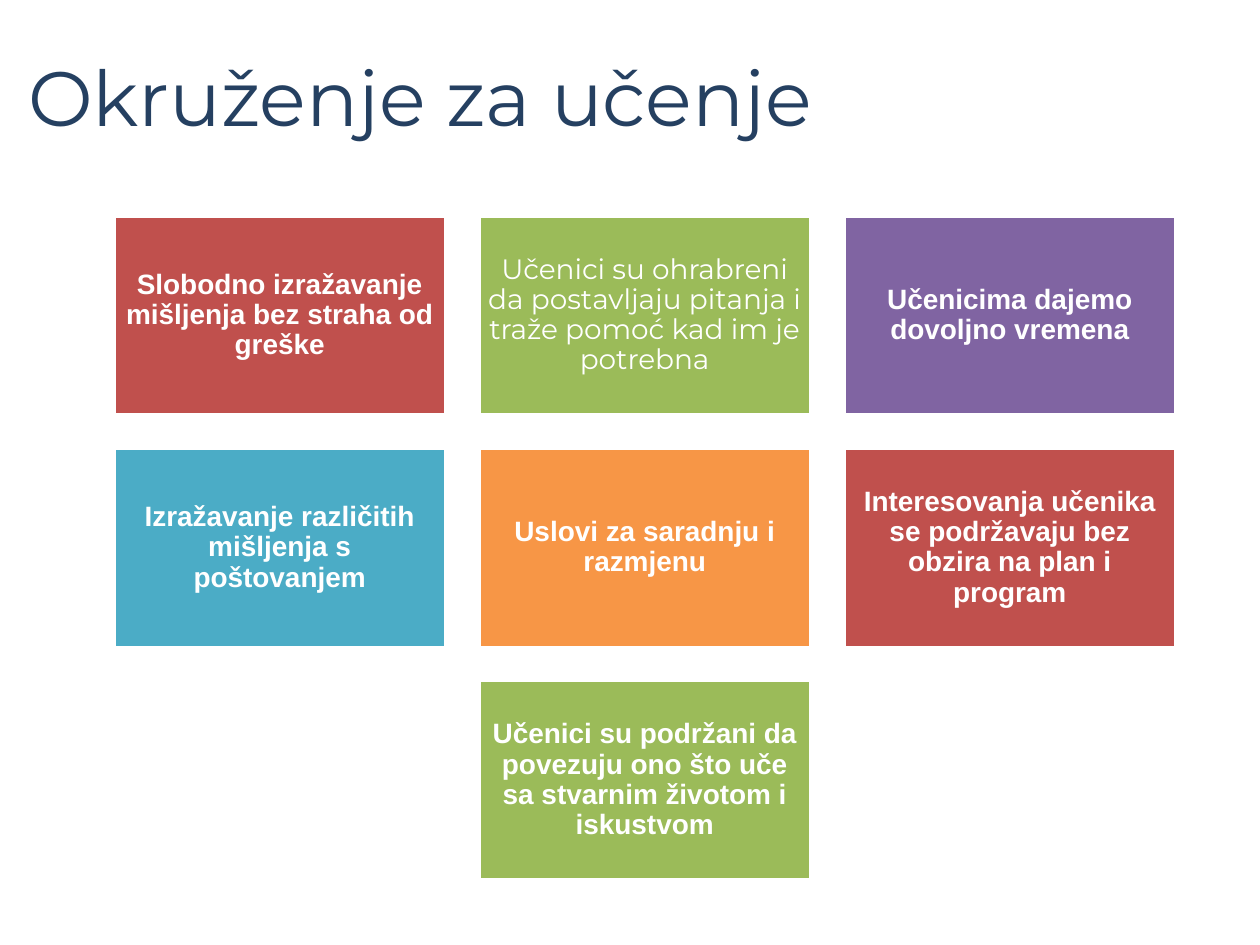
"""Build the slide on the learning environment, with a grid of seven cards."""
from pptx import Presentation
from pptx.dml.color import RGBColor
from pptx.enum.shapes import MSO_SHAPE
from pptx.enum.text import MSO_ANCHOR, PP_ALIGN
from pptx.util import Pt

COLORS = {
    "navy": "254061", "white": "FFFFFF", "red": "C0504D", "green": "9BBB59",
    "purple": "8064A2", "teal": "4BACC6", "orange": "F79646",
}


def write(holder, text, *, size, color, font="Arial", bold=False,
          align=PP_ALIGN.LEFT, line_spacing=1.0, insets=(7.2, 3.6)):
    frame = holder.text_frame
    frame.word_wrap = True
    frame.vertical_anchor = MSO_ANCHOR.MIDDLE
    frame.margin_left = frame.margin_right = Pt(insets[0])
    frame.margin_top = frame.margin_bottom = Pt(insets[1])
    paragraph = frame.paragraphs[0]
    paragraph.alignment = align
    paragraph.line_spacing = line_spacing
    run = paragraph.add_run()
    run.text = text
    run.font.name = font
    run.font.size = Pt(size)
    run.font.bold = bold
    run.font.color.rgb = RGBColor.from_string(COLORS[color])


presentation = Presentation()
presentation.slide_width, presentation.slide_height = Pt(720), Pt(540)
slide = presentation.slides.add_slide(presentation.slide_layouts[6])

title = slide.shapes.add_textbox(Pt(9), Pt(9.4), Pt(648), Pt(90))
write(title, "Okruženje za učenje", size=44, color="navy", font="Montserrat")

LEFT, TOP = 65, 123.3
WIDTH, HEIGHT = 189.6, 113.8
GAP = 19
conditions = [
    (0, 0, "red", "Arial", "Slobodno izražavanje mišljenja bez straha od greške"),
    (0, 1, "green", "Montserrat",
     "Učenici su ohrabreni da postavljaju pitanja i traže pomoć kad im je potrebna"),
    (0, 2, "purple", "Arial", "Učenicima dajemo dovoljno vremena"),
    (1, 0, "teal", "Arial", "Izražavanje različitih mišljenja s poštovanjem"),
    (1, 1, "orange", "Arial", "Uslovi za saradnju i razmjenu"),
    (1, 2, "red", "Arial",
     "Interesovanja učenika se podržavaju bez obzira na plan i program"),
    (2, 1, "green", "Arial",
     "Učenici su podržani da povezuju ono što uče sa stvarnim životom i iskustvom"),
]
for row, column, color, font, condition in conditions:
    card = slide.shapes.add_shape(
        MSO_SHAPE.RECTANGLE,
        Pt(LEFT + column * (WIDTH + GAP)), Pt(TOP + row * (HEIGHT + GAP)),
        Pt(WIDTH), Pt(HEIGHT))
    card.shadow.inherit = False
    card.fill.solid()
    card.fill.fore_color.rgb = RGBColor.from_string(COLORS[color])
    card.line.color.rgb = RGBColor.from_string(COLORS["white"])
    card.line.width = Pt(2)
    write(card, condition, size=16, color="white", font=font,
          bold=font == "Arial", align=PP_ALIGN.CENTER, line_spacing=0.9,
          insets=(4.8, 4.8))

presentation.save("out.pptx")
